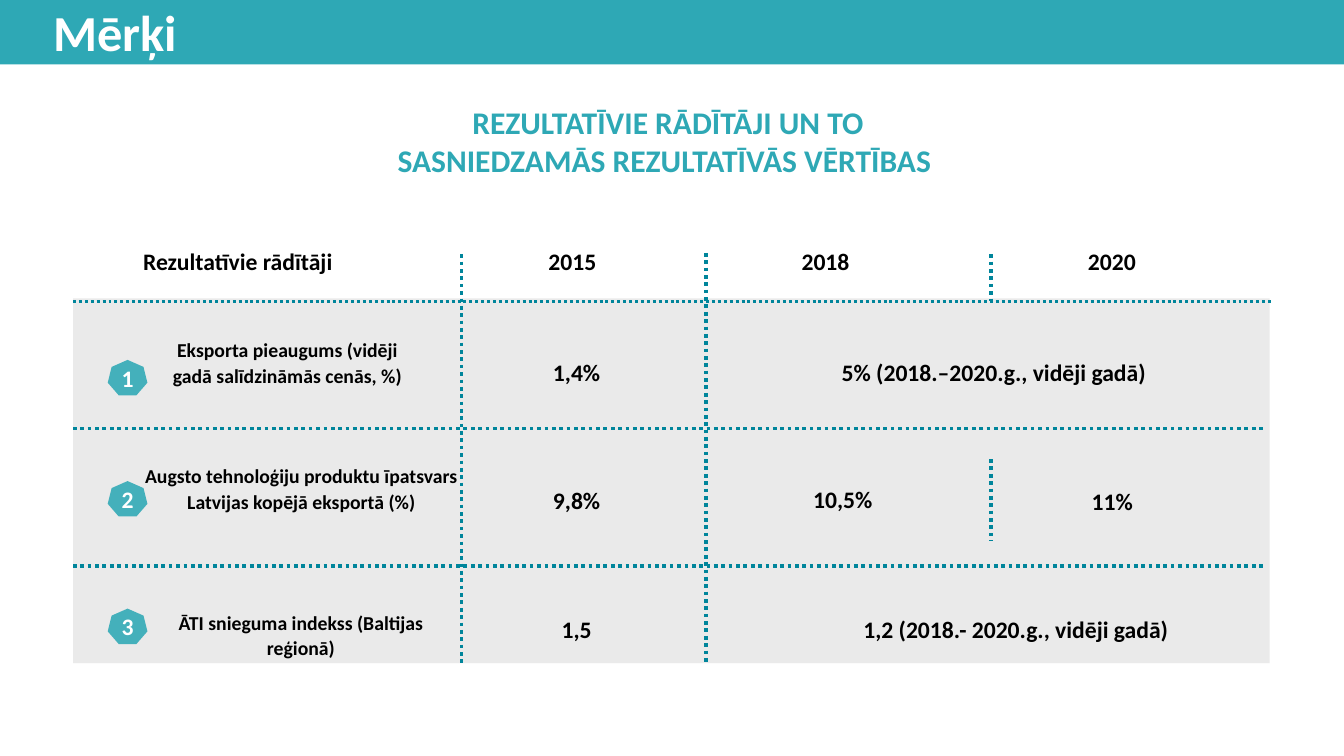
from dataclasses import dataclass

from lxml import etree
from pptx import Presentation
from pptx.dml.color import RGBColor
from pptx.enum.dml import MSO_LINE
from pptx.enum.shapes import MSO_CONNECTOR, MSO_SHAPE
from pptx.enum.text import MSO_ANCHOR, MSO_AUTO_SIZE, PP_ALIGN
from pptx.oxml.ns import qn
from pptx.shapes.autoshape import Shape
from pptx.slide import Slide
from pptx.text.text import TextFrame
from pptx.util import Inches, Pt

RECTANGLE = MSO_SHAPE.RECTANGLE
HEPTAGON = MSO_SHAPE.HEPTAGON
STRAIGHT = MSO_CONNECTOR.STRAIGHT
DOTTED = MSO_LINE.ROUND_DOT
GROW = MSO_AUTO_SIZE.SHAPE_TO_FIT_TEXT
MIDDLE = MSO_ANCHOR.MIDDLE
LEFT = PP_ALIGN.LEFT
CENTER = PP_ALIGN.CENTER

FONT = "Calibri"
COLORS = {
    "teal": "2EA8B5",
    "rule": "00859B",
    "panel": "E6E6E6",
    "black": "000000",
    "white": "FFFFFF",
}
SLIDE_WIDTH, SLIDE_HEIGHT = 18.96, 10.67
TABLE_LEFT = 1.03
VALUE_LEFT, SPLIT_LEFT, LAST_LEFT = 6.51, 9.96, 13.98


@dataclass(frozen=True)
class Label:
    text: str
    left: float
    top: float
    width: float
    height: float
    size: float = 24
    color: str = "black"
    align: PP_ALIGN = CENTER
    spaced: bool = False


@dataclass(frozen=True)
class Rule:
    x1: float
    y1: float
    x2: float
    y2: float
    weight: float = 3.75


@dataclass(frozen=True)
class Badge:
    number: str
    top: float


HEADINGS = [
    Label("Mērķi", 0.65, -0.03, 8.26, 0.96, 51.2, "white", LEFT),
    Label("REZULTATĪVIE RĀDĪTĀJI UN TO SASNIEDZAMĀS REZULTATĪVĀS VĒRTĪBAS ",
          5.12, 1.41, 8.61, 1.18, 32, "teal"),
    Label("Rezultatīvie rādītāji", 1.92, 3.43, 3.94, 0.5, align=LEFT),
    Label("2015", 7.6, 3.44, 0.95, 0.5),
    Label("2018", 11.17, 3.43, 0.95, 0.5),
    Label("2020", 15.25, 3.43, 0.95, 0.5, align=LEFT),
]
INDICATORS = [
    Label("Eksporta pieaugums (vidēji gadā salīdzināmās cenās, %)",
          2.17, 4.7, 3.77, 0.81, 20, spaced=True),
    Label("Augsto tehnoloģiju produktu īpatsvars Latvijas kopējā eksportā (%)",
          1.94, 6.48, 4.62, 0.81, 20, spaced=True),
    Label("ĀTI snieguma indekss (Baltijas reģionā)",
          2.01, 8.55, 4.47, 0.81, 20, spaced=True),
]
VALUES = [
    Label("1,4%", 7.65, 4.97, 0.97, 0.51, spaced=True),
    Label("9,8%", 7.65, 6.78, 0.97, 0.51, spaced=True),
    Label("1,5", 7.8, 8.6, 0.67, 0.51, spaced=True),
    Label("5% (2018.–2020.g., vidēji gadā)", 11.47, 4.98, 5.1, 0.51, spaced=True),
    Label("10,5%", 11.31, 6.79, 1.16, 0.5),
    Label("11%", 15.25, 6.79, 0.88, 0.51, spaced=True),
    Label("1,2 (2018.- 2020.g., vidēji gadā)", 11.64, 8.6, 5.38, 0.51, spaced=True),
]
RULES = [
    Rule(TABLE_LEFT, 4.25, 17.93, 4.25, 3),
    Rule(TABLE_LEFT, 6.05, 17.82, 6.05),
    Rule(TABLE_LEFT, 7.99, 17.82, 7.99),
    Rule(VALUE_LEFT, 3.59, VALUE_LEFT, 9.37),
    Rule(SPLIT_LEFT, 3.57, SPLIT_LEFT, 9.34),
    Rule(LAST_LEFT, 3.59, LAST_LEFT, 4.25),
    Rule(LAST_LEFT, 6.48, LAST_LEFT, 7.63),
]
BADGES = [Badge("1", 5.08), Badge("2", 6.79), Badge("3", 8.59)]


def rgb(name: str) -> RGBColor:
    return RGBColor.from_string(COLORS[name])


def write(frame: TextFrame, text: str, size: float, color: str, align: PP_ALIGN) -> None:
    para = frame.paragraphs[0]
    para.alignment = align
    span = para.add_run()
    span.text = text
    span.font.name = FONT
    span.font.size = Pt(size)
    span.font.bold = True
    span.font.color.rgb = rgb(color)


def add_label(page: Slide, label: Label) -> None:
    box = page.shapes.add_textbox(Inches(label.left), Inches(label.top),
                                  Inches(label.width), Inches(label.height))
    frame = box.text_frame
    frame.word_wrap = True
    frame.auto_size = GROW
    write(frame, label.text, label.size, label.color, label.align)
    if label.spaced:
        frame.paragraphs[0].line_spacing = 1.07
        frame.paragraphs[0].space_after = Pt(8)


def add_block(page: Slide, kind: MSO_SHAPE, left: float, top: float, width: float,
              height: float, color: str, opacity: int = 100) -> Shape:
    """Add a borderless filled shape; opacity is in percent."""
    block = page.shapes.add_shape(kind, Inches(left), Inches(top),
                                  Inches(width), Inches(height))
    block.shadow.inherit = False
    block.line.fill.background()
    block.fill.solid()
    block.fill.fore_color.rgb = rgb(color)
    if opacity < 100:
        tone = block.fill._xPr.find(qn("a:solidFill"))[0]
        etree.SubElement(tone, qn("a:alpha")).set("val", str(opacity * 1000))
    return block


def add_rule(page: Slide, rule: Rule) -> None:
    line = page.shapes.add_connector(STRAIGHT, Inches(rule.x1), Inches(rule.y1),
                                     Inches(rule.x2), Inches(rule.y2))
    line.line.color.rgb = rgb("rule")
    line.line.width = Pt(rule.weight)
    line.line.dash_style = DOTTED
    etree.SubElement(line._element.spPr, qn("a:effectLst"))


def add_badge(page: Slide, badge: Badge) -> None:
    block = add_block(page, HEPTAGON, 1.52, badge.top, 0.56, 0.5, "teal", 88)
    frame = block.text_frame
    frame.word_wrap = False
    frame.vertical_anchor = MIDDLE
    frame.margin_left = frame.margin_right = 0
    frame.margin_top = frame.margin_bottom = 0
    write(frame, badge.number, 24, "white", CENTER)


def main() -> None:
    deck = Presentation()
    deck.slide_width = Inches(SLIDE_WIDTH)
    deck.slide_height = Inches(SLIDE_HEIGHT)
    page = deck.slides.add_slide(deck.slide_layouts[6])

    add_block(page, RECTANGLE, TABLE_LEFT, 4.21, 16.88, 5.15, "panel", 82)
    add_block(page, RECTANGLE, 0, 0, SLIDE_WIDTH, 0.91, "teal")
    for label in HEADINGS + INDICATORS + VALUES:
        add_label(page, label)
    for rule in RULES:
        add_rule(page, rule)
    for badge in BADGES:
        add_badge(page, badge)

    deck.save("out.pptx")


if __name__ == "__main__":
    main()
